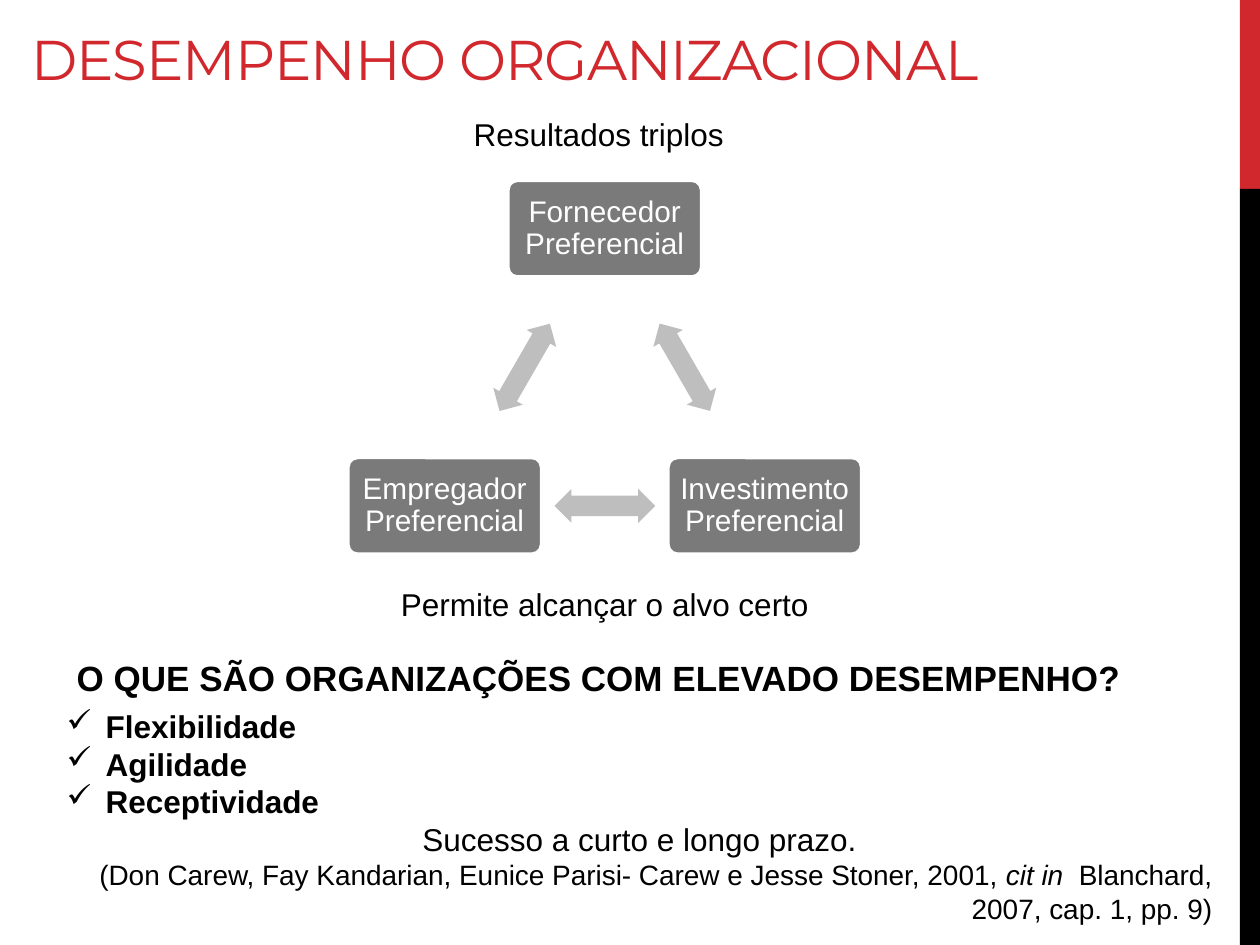
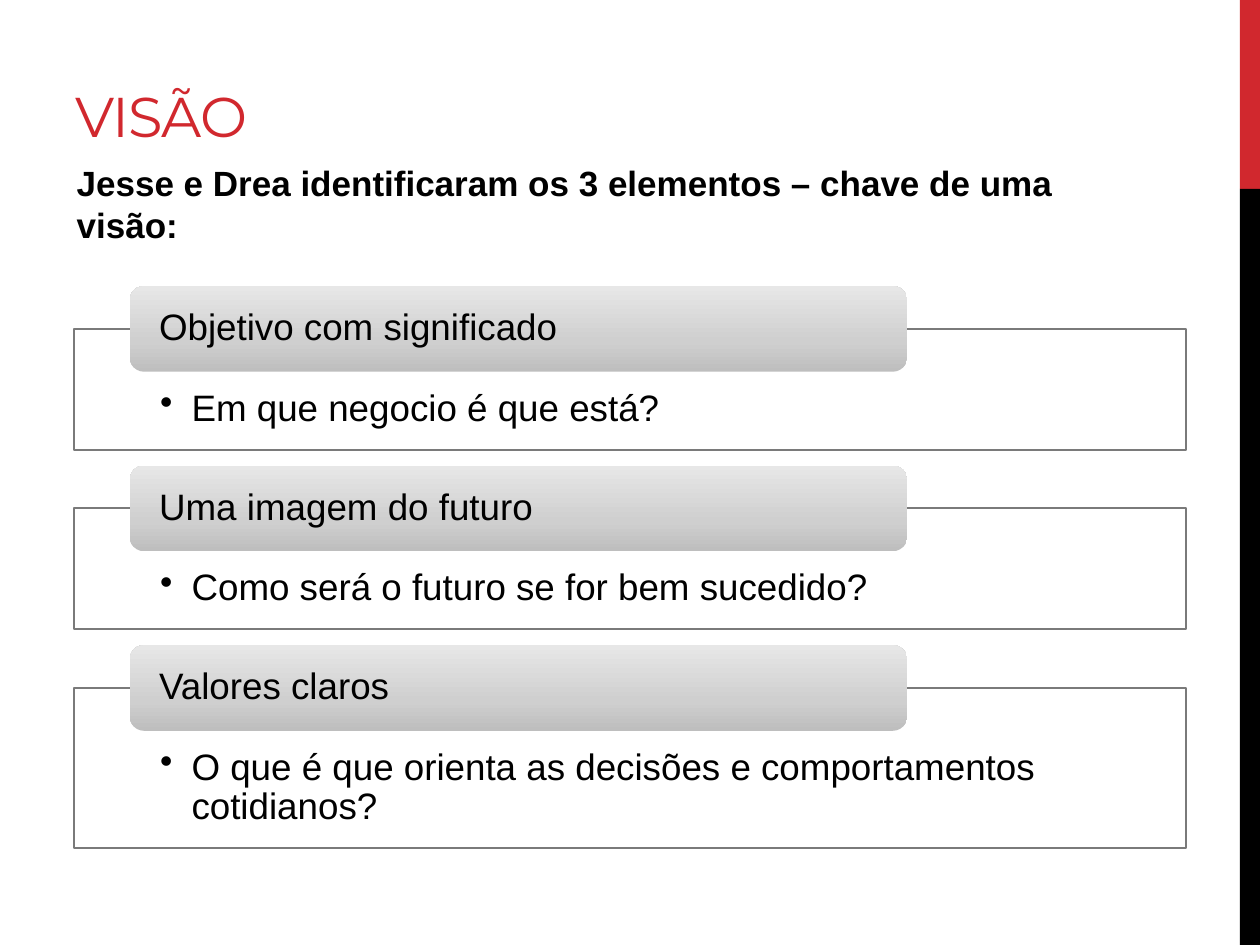
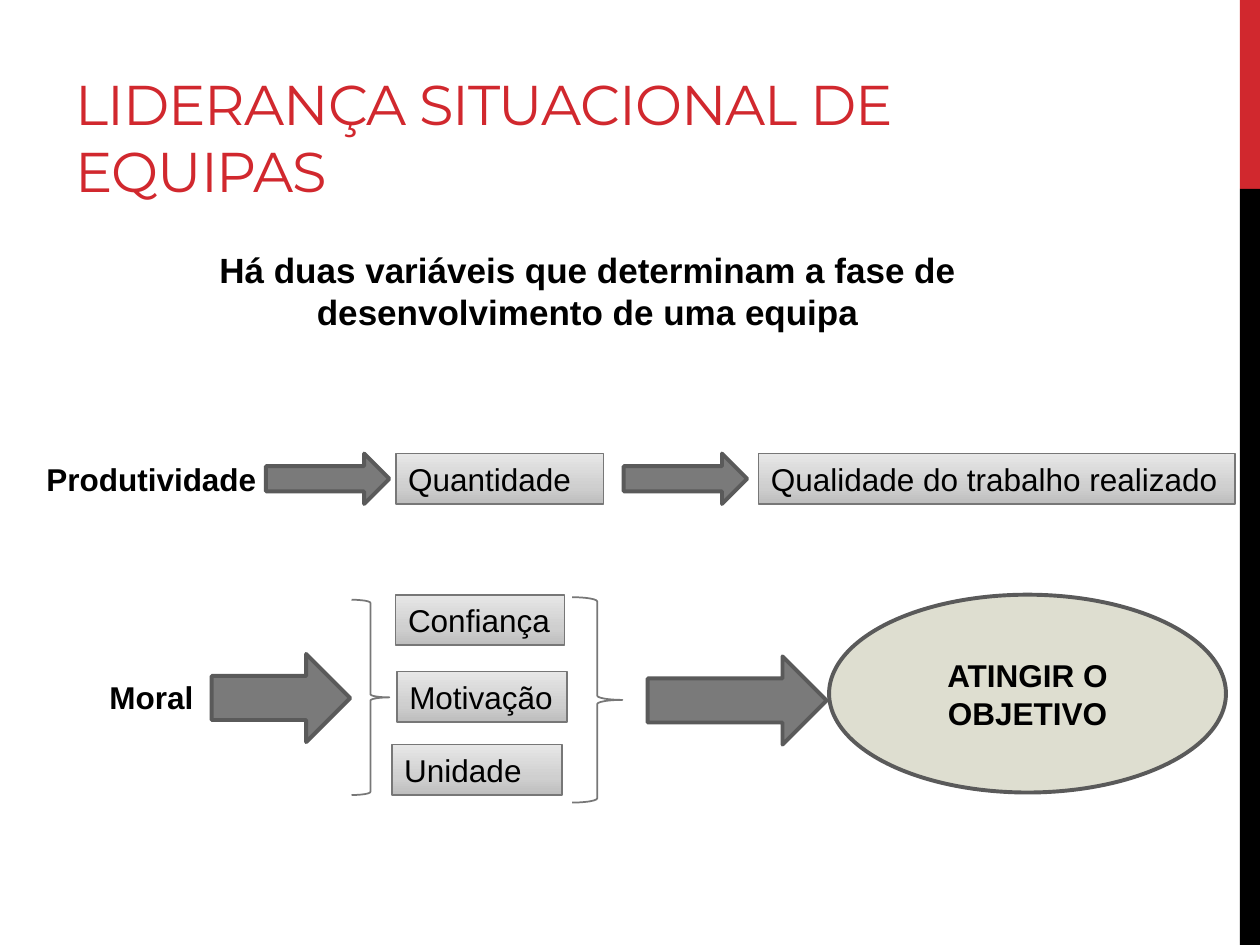
import copy

import pptx
import pptx.dml.color
import pptx.enum.shapes
import pptx.enum.text
import pptx.oxml.ns
import pptx.util
from lxml import etree

RED, BLACK, WHITE = "D1282E", "000000", "FFFFFF"
GREY, PALE, DARK, EDGE, SAND = "7A7A7A", "BEBEBE", "5A5A5A", "777777", "DEDED0"
SHADE = [(0, PALE), (0.35, "CFCFCF"), (1, "E7E7E7")]
KIND = pptx.enum.shapes.MSO_SHAPE
SIDE = pptx.enum.text.PP_ALIGN
HOLD = pptx.enum.text.MSO_ANCHOR
hue = pptx.dml.color.RGBColor.from_string

deck = pptx.Presentation()
deck.slide_width = pptx.util.Inches(10)
deck.slide_height = pptx.util.Inches(7.5)
COL = deck.slide_width / 100
ROW = deck.slide_height / 75


def draw(page, kind, spot, fill=None, line=None, thick=1):
    x, y, w, h = spot
    place = [round(n) for n in (x * COL, y * ROW, w * COL, h * ROW)]
    if kind is None:
        return page.shapes.add_textbox(*place)
    form = page.shapes.add_shape(kind, *place)
    form.shadow.inherit = False
    if fill is SHADE:
        form.fill.gradient()
        form.fill.gradient_angle = 90
        stops = form._element.xpath(".//a:gsLst")[0]
        stops.insert(1, copy.deepcopy(stops[0]))
        for stop, (share, tone) in zip(form.fill.gradient_stops, SHADE):
            stop.position = share
            stop.color.rgb = hue(tone)
    elif fill:
        form.fill.solid()
        form.fill.fore_color.rgb = hue(fill)
    else:
        form.fill.background()
    if line:
        form.line.color.rgb = hue(line)
        form.line.width = pptx.util.Pt(thick)
    else:
        form.line.fill.background()
    return form


def say(form, runs, size=18, bold=False, tone=BLACK, font="Arial", side=SIDE.LEFT,
        hold=HOLD.TOP, inset=(1, 0.5, 1, 0.5), lead=None, ahead=0, mark=None, hang=0):
    frame = form.text_frame
    frame.word_wrap = True
    frame.vertical_anchor = hold
    frame.margin_left, frame.margin_right = [round(n * COL) for n in inset[::2]]
    frame.margin_top, frame.margin_bottom = [round(n * ROW) for n in inset[1::2]]
    para = frame.paragraphs[0]
    if para.runs:
        para = frame.add_paragraph()
    para.alignment = side
    para.space_before = pptx.util.Pt(ahead)
    if lead:
        para.line_spacing = lead
    if mark:
        props = para._p.get_or_add_pPr()
        props.set("marL", str(round(hang * COL)))
        props.set("indent", str(round(-hang * COL)))
        etree.SubElement(props, pptx.oxml.ns.qn("a:buChar"), char=mark)
    for text, *style in runs:
        run = para.add_run()
        run.text = text
        run.font.name = font
        run.font.size = pptx.util.Pt(size)
        run.font.bold = bold
        run.font.italic = "slant" in style
        run.font.color.rgb = hue(tone)
        if font == "Montserrat":
            run._r.get_or_add_rPr().set("spc", "-60")


heads = [
    ("DESEMPENHO ORGANIZACIONAL", (1.5, 0.7, 93, 7.1)),
    ("VISÃO", (5, 1.7, 63.3, 10.6)),
    ("LIDERANÇA SITUACIONAL DE EQUIPAS", (5, 1.7, 76.5, 15)),
]
leads = [
    ("O QUE SÃO ORGANIZAÇÕES COM ELEVADO DESEMPENHO?", (5.1, 51.6, 85.9, 4.1), SIDE.LEFT),
    ("Jesse e Drea identificaram os 3 elementos – chave de uma visão:",
     (5.1, 12.3, 87.5, 8.7), SIDE.LEFT),
    ("Há duas variáveis que determinam a fase de desenvolvimento de uma equipa",
     (5, 19.2, 83.3, 47.8), SIDE.CENTER),
]
pages = []
for (head, spot), (lead, room, side) in zip(heads, leads):
    page = deck.slides.add_slide(deck.slide_layouts[6])
    draw(page, KIND.RECTANGLE, (98.4, 0, 1.6, 15), RED)
    draw(page, KIND.RECTANGLE, (98.4, 15, 1.6, 60), BLACK)
    say(draw(page, None, spot), [(head,)], 32, tone=RED, font="Montserrat", hold=HOLD.BOTTOM)
    say(draw(page, None, room), [(lead,)], 20, True, side=side, ahead=4)
    pages.append(page)
goal, view, team = pages

nodes = [("Fornecedor", 48, 18.15), ("Investimento", 60.7, 40.15), ("Empregador", 35.3, 40.15)]
for i, (name, x, y) in enumerate(nodes):
    node = draw(goal, KIND.ROUNDED_RECTANGLE, (x - 7.7, y - 3.85, 15.4, 7.7), GREY, WHITE, 2.25)
    node.adjustments[0] = 0.1
    say(node, [(name + " Preferencial",)], 17, tone=WHITE, side=SIDE.CENTER,
        hold=HOLD.MIDDLE, inset=(0.4, 0.4, 0.4, 0.4), lead=0.9)
    _, nextx, nexty = nodes[(i + 1) % 3]
    arrow = draw(goal, KIND.LEFT_RIGHT_ARROW,
                 ((x + nextx) / 2 - 4, (y + nexty) / 2 - 1.35, 8, 2.7), PALE)
    arrow.adjustments[0], arrow.adjustments[1] = 0.6, 0.5
    arrow.rotation = 60 + 120 * i
say(draw(goal, None, (29.1, 45.9, 37.8, 4)), [("Permite alcançar o alvo certo",)], side=SIDE.CENTER)
say(draw(goal, None, (36.6, 8.6, 22.8, 4.2)), [("Resultados triplos",)])
traits = draw(goal, None, (4.3, 55.6, 92.9, 18.5))
for trait in ("Flexibilidade", "Agilidade", "Receptividade"):
    say(traits, [(trait,)], bold=True, mark="✓", hang=3.1)
say(traits, [("Sucesso a curto e longo prazo.",)], side=SIDE.CENTER)
say(traits, [
    ("(Don Carew, Fay Kandarian, Eunice Parisi- Carew e Jesse Stoner, 2001, ",),
    ("cit in ", "slant"),
    (" Blanchard, 2007, cap. 1, pp. 9)",),
], 16, side=SIDE.RIGHT)

parts = [
    ("Objetivo com significado", "Em que negocio é que está?", 9.6),
    ("Uma imagem do futuro", "Como será o futuro se for bem sucedido?", 9.6),
    ("Valores claros", "O que é que orienta as decisões e comportamentos cotidianos?", 12.7),
]
for i, (name, ask, tall) in enumerate(parts):
    top = 22.7 + 14.25 * i
    panel = draw(view, KIND.RECTANGLE, (5.9, top + 3.4, 88.2, tall), WHITE, GREY)
    say(panel, [(ask,)], 21, inset=(6.8, 4.8, 6.8, 1.6), lead=0.9, mark="•", hang=2.5)
    tab = draw(view, KIND.ROUNDED_RECTANGLE, (10.3, top, 61.7, 6.8), SHADE)
    say(tab, [(name,)], 21, hold=HOLD.MIDDLE, inset=(2, 0, 2, 0), lead=0.9)

for name, spot in [("Produtividade", (2.7, 36, 18.8, 4)), ("Moral", (7.7, 53.3, 8.8, 4))]:
    say(draw(team, None, spot), [(name,)], bold=True)
for spot in [(21.1, 36, 9.8, 4), (49.5, 36, 9.8, 4), (16.8, 51.9, 11, 7), (51.4, 52.1, 14.2, 7)]:
    draw(team, KIND.RIGHT_ARROW, spot, GREY, DARK, 2.25)
for spot in [(27.9, 47.6, 3, 15.5), (45.4, 47.4, 4, 16.3)]:
    draw(team, KIND.RIGHT_BRACE, spot, line=EDGE)
for name, x, y, wide in [
    ("Quantidade", 31.4, 36, 16.5),
    ("Qualidade do trabalho realizado", 60.2, 36, 37.8),
    ("Confiança", 31.4, 47.2, 13.4),
    ("Motivação", 31.5, 53.3, 13.5),
    ("Unidade", 31.1, 59.1, 13.5),
]:
    say(draw(team, KIND.RECTANGLE, (x, y, wide, 4), SHADE, EDGE), [(name,)])
aim = draw(team, KIND.OVAL, (65.8, 47.2, 31.5, 15.7), SAND, DARK, 2.25)
say(aim, [("ATINGIR O OBJETIVO",)], bold=True, side=SIDE.CENTER, hold=HOLD.MIDDLE)

deck.save("out.pptx")
